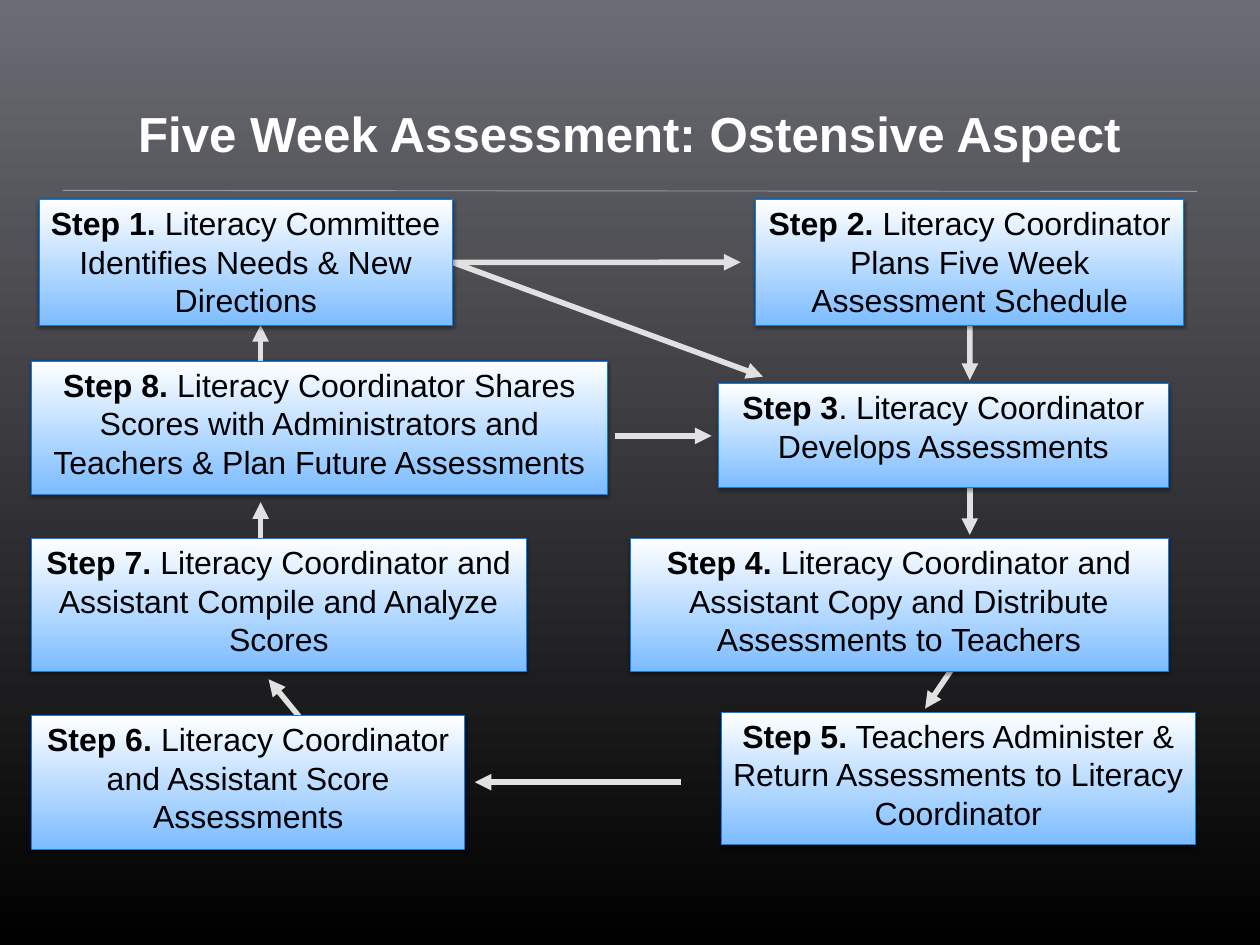
"""Build the Five Week Assessment flow chart slide."""
from dataclasses import dataclass
from typing import Optional

from lxml import etree
from pptx import Presentation
from pptx.dml.color import RGBColor
from pptx.dml.fill import FillFormat
from pptx.enum.shapes import MSO_CONNECTOR, MSO_SHAPE
from pptx.enum.text import MSO_ANCHOR, PP_ALIGN
from pptx.oxml.ns import qn
from pptx.shapes.autoshape import Shape
from pptx.shapes.connector import Connector
from pptx.slide import Slide
from pptx.text.text import _Paragraph
from pptx.util import Cm, Pt

PROCESS = MSO_SHAPE.FLOWCHART_PROCESS
RECTANGLE = MSO_SHAPE.RECTANGLE
STRAIGHT = MSO_CONNECTOR.STRAIGHT
CENTER = PP_ALIGN.CENTER
TOP, BOTTOM = MSO_ANCHOR.TOP, MSO_ANCHOR.BOTTOM
BOTTOM_SIDE, RIGHT_SIDE = 2, 3


@dataclass(frozen=True)
class Theme:
    """Colours, font and sizes used on the slide."""
    font: str = "Arial"
    title_size: float = 40
    step_size: float = 26
    arrow_width: float = 4.5
    thin_width: float = 0.75
    background_top: str = "6C6C74"
    background_bottom: str = "000000"
    box_top: str = "FFFFFF"
    box_bottom: str = "7CBCFF"
    box_line: str = "0080FF"
    title: str = "FFFFFF"
    text: str = "000000"
    arrow: str = "E1E1E1"
    divider: str = "9A9A9A"
    shadow: str = "000000"


@dataclass(frozen=True)
class Step:
    """A process box, measured in centimetres."""
    label: str
    description: str
    left: float
    top: float
    width: float
    height: float
    shape_type: MSO_SHAPE = RECTANGLE


@dataclass(frozen=True)
class Arrow:
    """An arrow in centimetres, with the step and side it starts from, if joined."""
    start_x: float
    start_y: float
    end_x: float
    end_y: float
    step_number: Optional[int] = None
    side: int = RIGHT_SIDE


THEME = Theme()
LEFT_EDGE = 0.91
LEFT_ARROWS = 7.47
RIGHT_ARROWS = 27.8

STEPS = [
    Step("Step 1.", " Literacy Committee Identifies Needs & New Directions",
         1.12, 5.72, 11.86, 3.61, PROCESS),
    Step("Step 2.", " Literacy Coordinator Plans Five Week Assessment Schedule",
         21.67, 5.72, 12.27, 3.61, PROCESS),
    Step("Step 3", ". Literacy Coordinator Develops Assessments",
         20.6, 11, 12.9, 2.97),
    Step("Step 4.", " Literacy Coordinator and Assistant Copy and Distribute Assessments to Teachers",
         18.06, 15.44, 15.44, 3.81),
    Step("Step 5.", " Teachers Administer & Return Assessments to Literacy Coordinator",
         20.68, 20.42, 13.59, 3.81),
    Step("Step 6. ", "Literacy Coordinator and Assistant Score Assessments",
         LEFT_EDGE, 20.52, 12.42, 3.84),
    Step("Step 7. ", "Literacy Coordinator and Assistant Compile and Analyze Scores",
         LEFT_EDGE, 15.44, 14.17, 3.81),
    Step("Step 8. ", "Literacy Coordinator Shares Scores with Administrators and Teachers "
         "& Plan Future Assessments", LEFT_EDGE, 10.36, 16.51, 3.81),
]

ARROWS = [
    Arrow(12.98, 7.52, 21.23, 7.52, 1),
    Arrow(12.98, 7.52, 21.87, 10.8, 1),
    Arrow(RIGHT_ARROWS, 9.33, RIGHT_ARROWS, 10.9, 2, BOTTOM_SIDE),
    Arrow(RIGHT_ARROWS, 13.77, RIGHT_ARROWS, 15.34),
    Arrow(27.38, 19.05, 26.52, 20.32),
    Arrow(19.53, 22.43, 13.61, 22.43),
    Arrow(8.74, 20.75, 7.7, 19.48),
    Arrow(LEFT_ARROWS, 16.08, LEFT_ARROWS, 14.4),
    Arrow(LEFT_ARROWS, 11, LEFT_ARROWS, 9.32),
    Arrow(17.63, 12.5, 20.4, 12.5),
]


def color(value: str) -> RGBColor:
    """Return the colour for a hexadecimal value."""
    return RGBColor.from_string(value)


def fill_downward(fill: FillFormat, top: str, bottom: str) -> None:
    """Apply a vertical gradient."""
    fill.gradient()
    fill.gradient_angle = 270
    for stop, value in zip(fill.gradient_stops, (top, bottom)):
        stop.color.rgb = color(value)


def style_paragraph(paragraph: _Paragraph, size: float, value: str) -> None:
    """Centre a paragraph and set its font."""
    paragraph.alignment = CENTER
    paragraph.font.name = THEME.font
    paragraph.font.size = Pt(size)
    paragraph.font.color.rgb = color(value)


def add_line(slide: Slide, ends: Arrow, value: str, width: float) -> Connector:
    """Draw a straight line without a shadow."""
    line = slide.shapes.add_connector(
        STRAIGHT, Cm(ends.start_x), Cm(ends.start_y), Cm(ends.end_x), Cm(ends.end_y))
    line.line.color.rgb = color(value)
    line.line.width = Pt(width)
    etree.SubElement(line._element.spPr, qn("a:effectLst"))
    return line


def add_arrow(slide: Slide, arrow: Arrow) -> Connector:
    """Draw a line with a triangular head at its end."""
    connector = add_line(slide, arrow, THEME.arrow, THEME.arrow_width)
    etree.SubElement(connector.line._get_or_add_ln(), qn("a:tailEnd"), type="triangle")
    return connector


def add_shadow(shape: Shape) -> None:
    """Give a shape a soft shadow below it."""
    shape.shadow.inherit = False
    effects = shape._element.spPr.find(qn("a:effectLst"))
    shadow = etree.SubElement(
        effects, qn("a:outerShdw"), blurRad=str(Pt(3.1)), dist=str(Pt(1.6)),
        dir="5400000", rotWithShape="0")
    shade = etree.SubElement(shadow, qn("a:srgbClr"), val=THEME.shadow)
    etree.SubElement(shade, qn("a:alpha"), val="38000")


def add_step(slide: Slide, step: Step) -> Shape:
    """Draw a process box with its bold label and description."""
    shape = slide.shapes.add_shape(
        step.shape_type, Cm(step.left), Cm(step.top), Cm(step.width), Cm(step.height))
    fill_downward(shape.fill, THEME.box_top, THEME.box_bottom)
    shape.line.color.rgb = color(THEME.box_line)
    shape.line.width = Pt(THEME.thin_width)
    add_shadow(shape)
    shape.text_frame.word_wrap = True
    shape.text_frame.vertical_anchor = TOP
    paragraph = shape.text_frame.paragraphs[0]
    style_paragraph(paragraph, THEME.step_size, THEME.text)
    for text, bold in ((step.label, True), (step.description, False)):
        run = paragraph.add_run()
        run.text = text
        run.font.bold = bold
    return shape


def add_title(slide: Slide, text: str) -> None:
    """Draw the slide title."""
    frame = slide.shapes.add_textbox(Cm(1.57), Cm(0.91), Cm(32.94), Cm(3.89)).text_frame
    frame.word_wrap = True
    frame.vertical_anchor = BOTTOM
    frame.margin_left = frame.margin_right = frame.margin_top = frame.margin_bottom = Cm(0.15)
    paragraph = frame.paragraphs[0]
    paragraph.text = text
    style_paragraph(paragraph, THEME.title_size, THEME.title)
    paragraph.font.bold = True


def main() -> None:
    """Build and save the presentation."""
    presentation = Presentation()
    presentation.slide_width, presentation.slide_height = Cm(36.12), Cm(27.1)
    slide = presentation.slides.add_slide(presentation.slide_layouts[6])
    fill_downward(slide.background.fill, THEME.background_top, THEME.background_bottom)
    add_line(slide, Arrow(1.8, 5.46, 34.32, 5.49), THEME.divider, THEME.thin_width)
    connectors = [add_arrow(slide, arrow) for arrow in ARROWS]
    add_title(slide, "Five Week Assessment: Ostensive Aspect")
    boxes = [add_step(slide, step) for step in STEPS]
    for arrow, connector in zip(ARROWS, connectors):
        if arrow.step_number:
            connector.begin_connect(boxes[arrow.step_number - 1], arrow.side)
    presentation.save("out.pptx")


if __name__ == "__main__":
    main()
